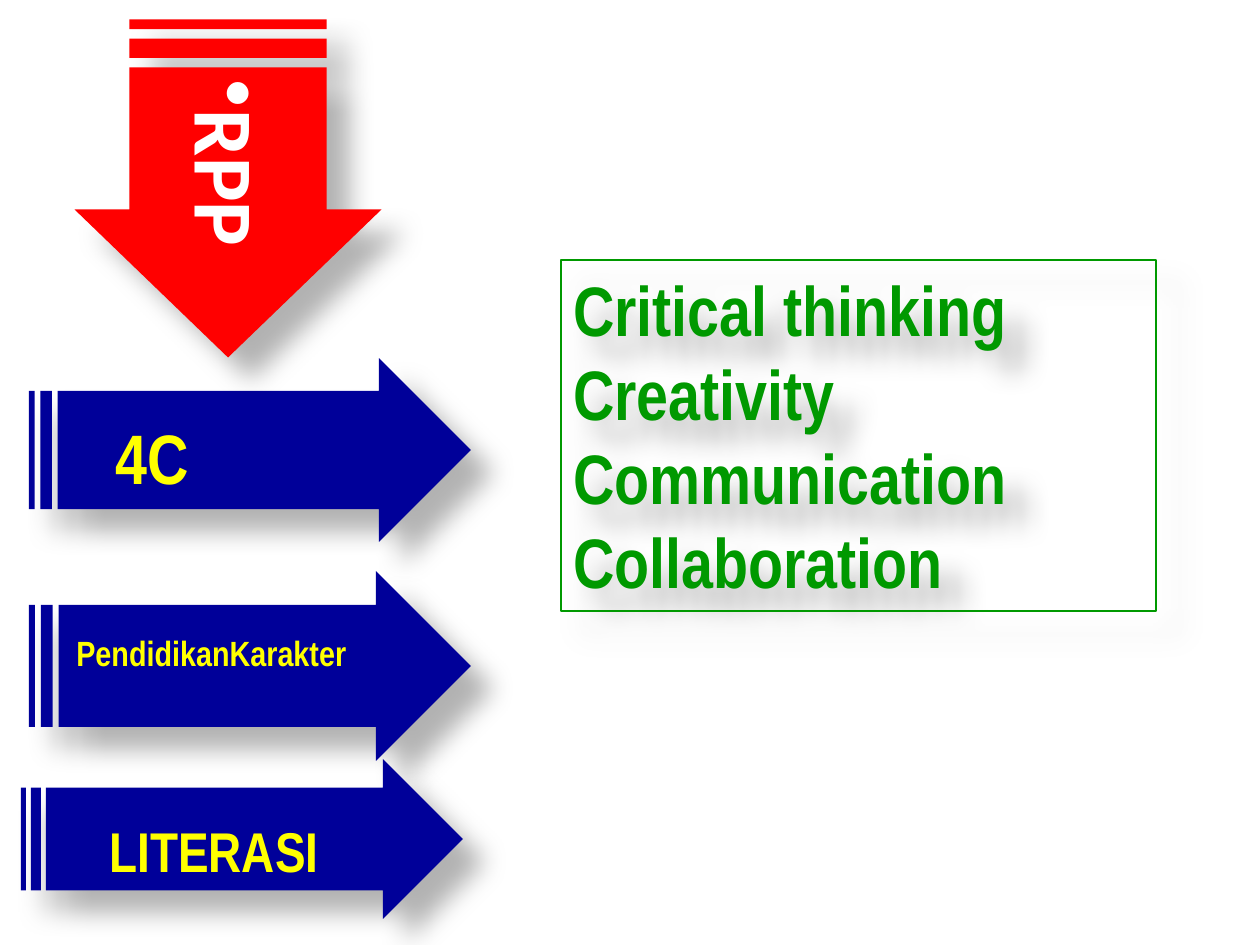
from lxml import etree
from pptx import Presentation
from pptx.dml.color import RGBColor
from pptx.enum.shapes import MSO_SHAPE
from pptx.enum.text import MSO_ANCHOR, PP_ALIGN
from pptx.oxml.ns import qn
from pptx.util import Pt

ARROW, RECT = MSO_SHAPE.STRIPED_RIGHT_ARROW, MSO_SHAPE.RECTANGLE
TOP, MIDDLE = MSO_ANCHOR.TOP, MSO_ANCHOR.MIDDLE
LEFT = PP_ALIGN.LEFT
NARROW = "Arial Narrow"
NAVY, YELLOW, GREEN = "000099", "FFFF00", "009900"
RED, WHITE, BLACK = "FF0000", "FFFFFF", "000000"
HANG = 16

# arrow box, label box relative to the arrow, text, size
TOPICS = [
    ((29, 358, 442, 184), (74, 50, 290, 97), "4C", 40),
    ((29, 571, 442, 190), (35, 54, 375, 39), "PendidikanKarakter", 20),
    ((21, 759, 442, 160), (76, 51, 291, 48), "LITERASI", 32),
]
SKILLS = ["Critical thinking", "Creativity", "Communication", "Collaboration"]


def px(n):
    return round(n * 914400 / 126)


def paint(color, hue):
    color.rgb = RGBColor.from_string(hue)


def cast(shape):
    """Give the shape a soft shadow to the lower right."""
    shape.shadow.inherit = False
    effects = shape._element.spPr.find(qn("a:effectLst"))
    outer = etree.SubElement(
        effects, qn("a:outerShdw"), blurRad=str(Pt(15)), dist=str(Pt(18)),
        dir=str(45 * 60000), algn="ctr", rotWithShape="0")
    tint = etree.SubElement(outer, qn("a:srgbClr"), val=BLACK)
    etree.SubElement(tint, qn("a:alpha"), val="30000")


def write(shape, lines, size, hue, font=NARROW, anchor=TOP):
    frame = shape.text_frame
    frame.word_wrap = True
    frame.vertical_anchor = anchor
    frame.text = "\n".join(lines)
    for para in frame.paragraphs:
        para.alignment = LEFT
        para.font.name, para.font.size, para.font.bold = font, Pt(size), True
        paint(para.font.color, hue)


def hang(shape, bullet=None):
    """Set a hanging indent, with a bullet if one is given."""
    for para in shape.text_frame.paragraphs:
        props = para._p.get_or_add_pPr()
        props.set("marL", str(px(HANG)))
        props.set("indent", str(-px(HANG)))
        if bullet:
            mark = etree.Element(qn("a:buChar"), char=bullet)
            props.insert_element_before(mark, "a:tabLst", "a:defRPr", "a:extLst")


def add_arrow(shapes, box, hue, head=0.5):
    arrow = shapes.add_shape(ARROW, *map(px, box))
    arrow.adjustments[0], arrow.adjustments[1] = 0.642, head
    arrow.fill.solid()
    paint(arrow.fill.fore_color, hue)
    arrow.line.fill.background()
    cast(arrow)
    return arrow


def add_skills(slide, box):
    panel = slide.shapes.add_shape(RECT, *map(px, box))
    panel.fill.background()
    paint(panel.line.color, GREEN)
    panel.line.width = Pt(0.75)
    cast(panel)
    write(panel, SKILLS, 40, GREEN)


def add_topic(slide, box, inner, text, size):
    group = slide.shapes.add_group_shape()
    add_arrow(group.shapes, box, NAVY)
    x, y, w, h = inner
    label = group.shapes.add_textbox(
        px(box[0] + x), px(box[1] + y), px(w), px(h))
    write(label, [text], size, YELLOW)
    hang(label)


def add_plan(slide, box):
    arrow = add_arrow(slide.shapes, box, RED, 0.482)
    arrow.rotation = 90
    write(arrow, ["RPP"], 48, WHITE, "Calibri", MIDDLE)
    hang(arrow, "•")


def main():
    deck = Presentation()
    deck.slide_width, deck.slide_height = px(1260), px(945)
    slide = deck.slides.add_slide(deck.slide_layouts[6])
    add_skills(slide, (561, 260, 595, 351))
    for topic in TOPICS:
        add_topic(slide, *topic)
    add_plan(slide, (59, 35, 338, 307))
    deck.save("out.pptx")


if __name__ == "__main__":
    main()
